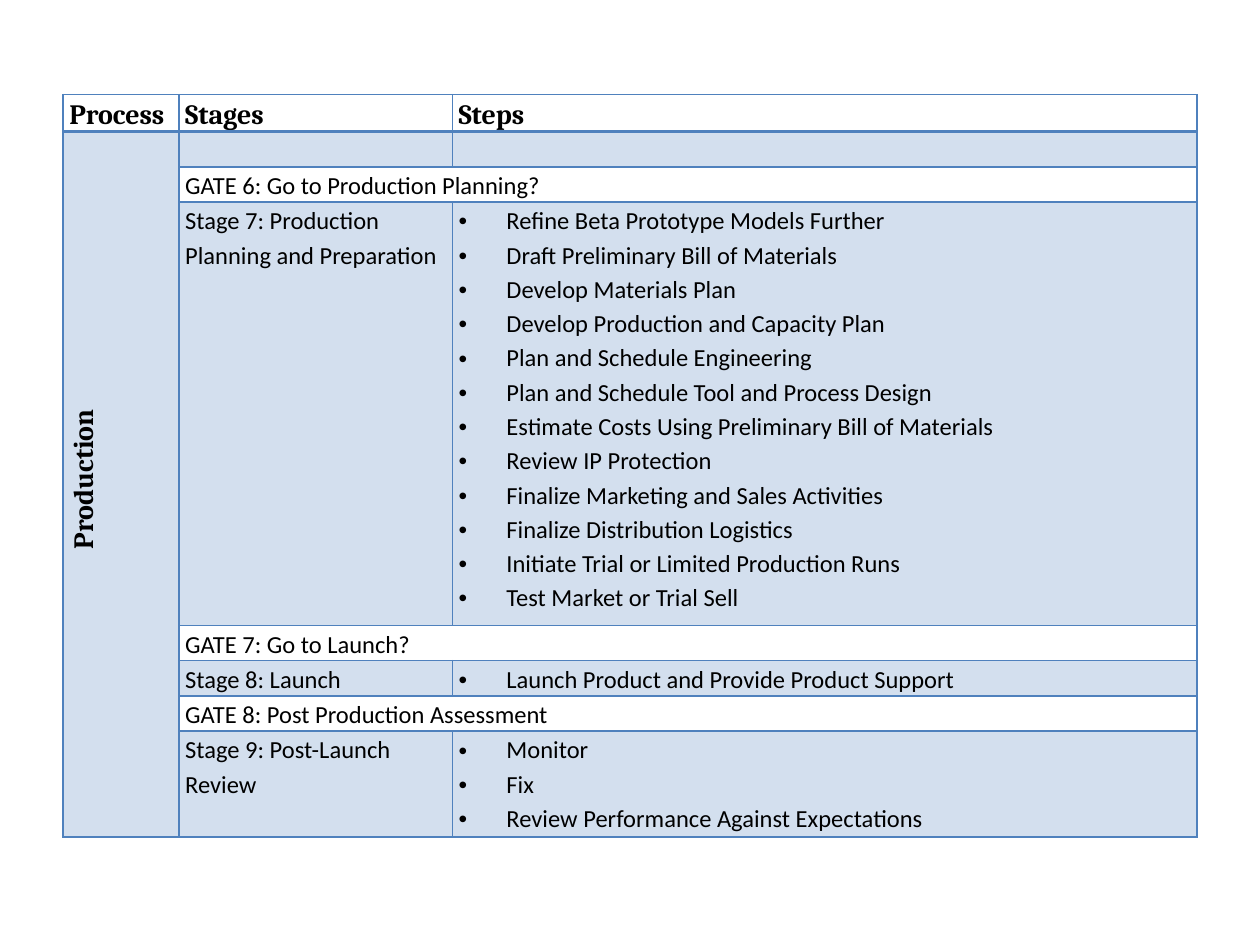
from dataclasses import dataclass
from lxml import etree
from pptx import Presentation
from pptx.dml.color import RGBColor
from pptx.enum.text import MSO_ANCHOR, PP_ALIGN
from pptx.oxml.ns import qn
from pptx.util import Inches, Pt

MIDDLE = MSO_ANCHOR.MIDDLE
CENTER = PP_ALIGN.CENTER


@dataclass(frozen=True)
class Theme:
    ink: str = "000000"
    rule: str = "4F81BD"
    tint: str = "D3DFEE"
    head: tuple = ("Cambria", 16, True)
    body: tuple = ("Calibri", 14, False)
    thin: float = 1
    thick: float = 2.25
    lead: float = 1.15
    pad: float = 0.05
    hang: float = 0.38


THEME = Theme()
COLS = (0.92, 2.17, 5.91)
LINE = 0.28
HEADS = ("Process", "Stages", "Steps")
PHASE = "Production"
ROWS = [
    ("", []),
    ("GATE 6: Go to Production Planning?", None),
    ("Stage 7: Production Planning and Preparation", [
        "Refine Beta Prototype Models Further",
        "Draft Preliminary Bill of Materials",
        "Develop Materials Plan",
        "Develop Production and Capacity Plan",
        "Plan and Schedule Engineering",
        "Plan and Schedule Tool and Process Design",
        "Estimate Costs Using Preliminary Bill of Materials",
        "Review IP Protection",
        "Finalize Marketing and Sales Activities",
        "Finalize Distribution Logistics",
        "Initiate Trial or Limited Production Runs",
        "Test Market or Trial Sell",
    ]),
    ("GATE 7: Go to Launch?", None),
    ("Stage 8: Launch", ["Launch Product and Provide Product Support"]),
    ("GATE 8: Post Production Assessment", None),
    ("Stage 9: Post-Launch Review", [
        "Monitor",
        "Fix",
        "Review Performance Against Expectations",
    ]),
]


def add_rules(cell, row):
    props = cell._tc.get_or_add_tcPr()
    heavy = {0: "lnB", 1: "lnT"}.get(row)
    for side in ("lnL", "lnR", "lnT", "lnB"):
        width = THEME.thick if side == heavy else THEME.thin
        line = etree.SubElement(props, qn(f"a:{side}"), w=str(Pt(width)))
        fill = etree.SubElement(line, qn("a:solidFill"))
        etree.SubElement(fill, qn("a:srgbClr"), val=THEME.rule)


def style_cell(cell, row, tint):
    add_rules(cell, row)
    if tint:
        cell.fill.solid()
        cell.fill.fore_color.rgb = RGBColor.from_string(THEME.tint)
    else:
        cell.fill.background()
    cell.margin_left = cell.margin_right = Inches(THEME.pad)
    cell.margin_top = cell.margin_bottom = 0


def set_text(cell, lines, face, bullet=False):
    name, size, bold = face
    frame = cell.text_frame
    frame.text = "\n".join(lines)
    for para in frame.paragraphs:
        if bullet and para.text:
            props = para._p.get_or_add_pPr()
            hang = Inches(THEME.hang)
            props.set("marL", str(hang))
            props.set("indent", str(-hang))
            etree.SubElement(props, qn("a:buFont"), typeface="Arial")
            etree.SubElement(props, qn("a:buChar"), char="•")
        para.line_spacing = THEME.lead
        font = para.font
        font.name, font.size, font.bold = name, Pt(size), bold
        font.color.rgb = RGBColor.from_string(THEME.ink)
        if not para.text:
            etree.SubElement(para._p, qn("a:endParaRPr"), sz=str(size * 100))


def add_phase(table):
    cell = table.cell(1, 0)
    cell.merge(table.cell(len(ROWS), 0))
    set_text(cell, [PHASE], THEME.head)
    cell.vertical_anchor = MIDDLE
    cell._tc.get_or_add_tcPr().set("vert", "vert270")
    para = cell.text_frame.paragraphs[0]
    para.alignment = CENTER
    para._p.get_or_add_pPr().set("marL", str(Inches(0.08)))


def add_grid(slide, left, top, width, height):
    shape = slide.shapes.add_table(
        len(ROWS) + 1, len(COLS), left, top, width, height)
    table = shape.table
    table.first_row = table.horz_banding = False
    for col, share in zip(table.columns, COLS):
        col.width = int(width * share / sum(COLS))
    table.rows[0].height = Inches(LINE)
    for col, head in enumerate(HEADS):
        cell = table.cell(0, col)
        style_cell(cell, 0, False)
        set_text(cell, [head], THEME.head)
    for row, (stage, steps) in enumerate(ROWS, 1):
        gate = steps is None
        count = 1 if gate else max(1, len(steps))
        table.rows[row].height = Inches(LINE * count)
        for col in range(len(COLS)):
            style_cell(table.cell(row, col), row, col == 0 or not gate)
        set_text(table.cell(row, 1), [stage], THEME.body)
        if gate:
            table.cell(row, 1).merge(table.cell(row, 2))
        else:
            set_text(table.cell(row, 2), steps, THEME.body, True)
    add_phase(table)


def main():
    deck = Presentation()
    deck.slide_width, deck.slide_height = Inches(10), Inches(7.5)
    wide, high = deck.slide_width, deck.slide_height
    slide = deck.slides.add_slide(deck.slide_layouts[6])
    add_grid(slide, int(wide * 0.05), int(high * 0.1),
             int(wide * 0.9), int(high * 0.78))
    deck.save("out.pptx")


if __name__ == "__main__":
    main()
